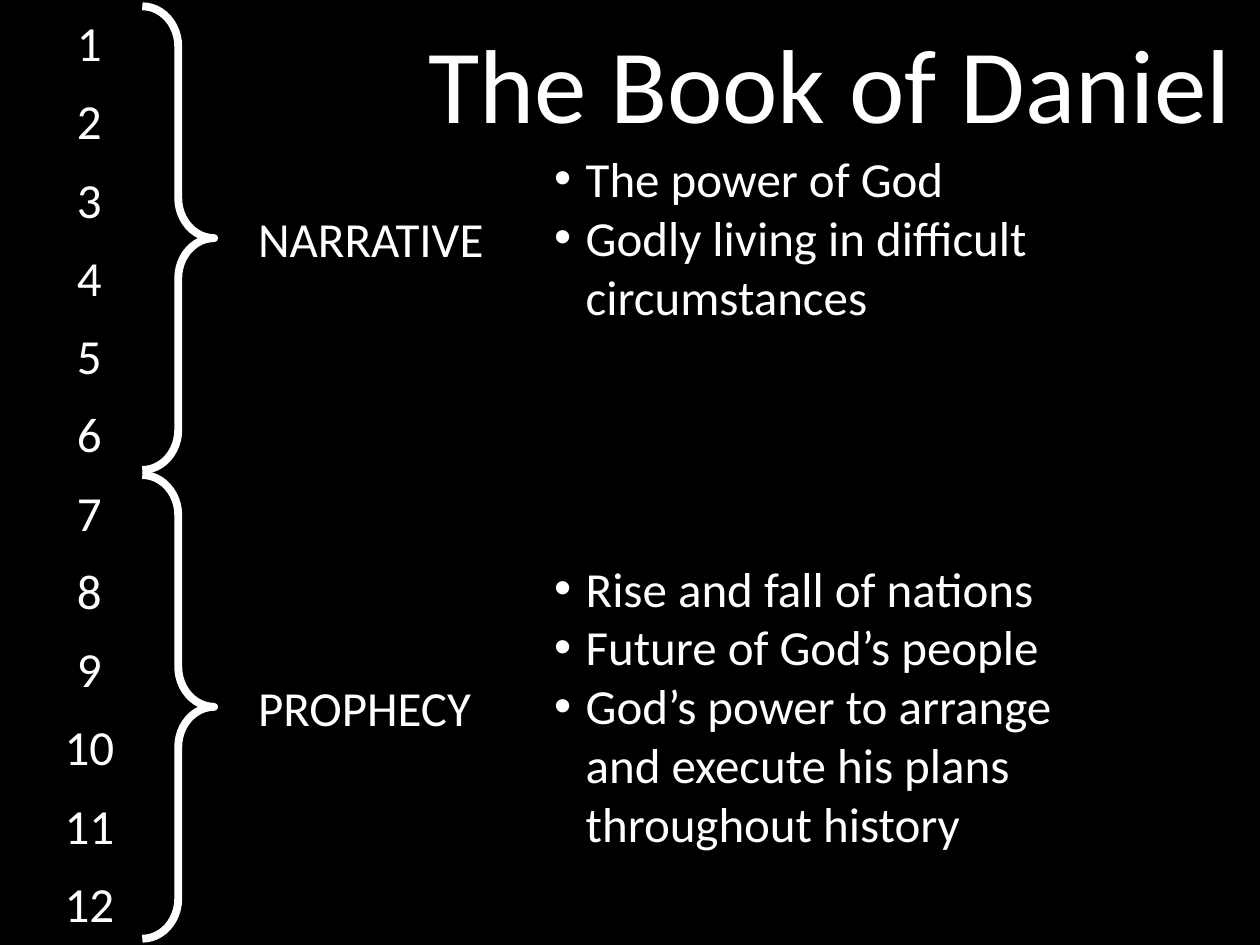
from dataclasses import dataclass

import lxml.etree
import pptx
import pptx.dml.color
import pptx.enum.shapes
import pptx.enum.text
import pptx.oxml.ns
import pptx.util

Inches = pptx.util.Inches
Pt = pptx.util.Pt
Align = pptx.enum.text.PP_ALIGN
Anchor = pptx.enum.text.MSO_ANCHOR
Shape = pptx.enum.shapes.MSO_SHAPE


@dataclass(frozen=True)
class Theme:
    font: str = "Calibri"
    background: str = "000000"
    foreground: str = "FFFFFF"
    title_size: int = 60
    body_size: int = 28
    brace_width: float = 4.5


def add_bullet(paragraph, indent=0.25):
    properties = paragraph._p.get_or_add_pPr()
    properties.set("marL", str(Inches(indent)))
    properties.set("indent", str(-Inches(indent)))
    for tag, name, value in (("a:buFont", "typeface", "Arial"), ("a:buChar", "char", "•")):
        element = lxml.etree.SubElement(properties, pptx.oxml.ns.qn(tag))
        element.set(name, value)


def write_text(frame, lines, *, theme, size, align=Align.LEFT, anchor=Anchor.MIDDLE,
               bullets=False, margin=None):
    frame.word_wrap = True
    frame.auto_size = pptx.enum.text.MSO_AUTO_SIZE.NONE
    frame.vertical_anchor = anchor
    if margin is not None:
        frame.margin_left = frame.margin_right = Inches(margin)
        frame.margin_top = frame.margin_bottom = Inches(margin)
    for index, line in enumerate(lines):
        paragraph = frame.paragraphs[0] if index == 0 else frame.add_paragraph()
        paragraph.alignment = align
        if bullets:
            add_bullet(paragraph)
        run = paragraph.add_run()
        run.text = line
        run.font.name = theme.font
        run.font.size = Pt(size)
        run.font.color.rgb = pptx.dml.color.RGBColor.from_string(theme.foreground)


class SlideBuilder:
    """Draws themed elements on one slide; a box is left, top, width, height in inches."""

    def __init__(self, slide, theme):
        self.slide = slide
        self.theme = theme
        fill = slide.background.fill
        fill.solid()
        fill.fore_color.rgb = pptx.dml.color.RGBColor.from_string(theme.background)

    def title(self, text, box):
        shape = self.slide.shapes.title
        shape.left, shape.top, shape.width, shape.height = map(Inches, box)
        write_text(shape.text_frame, [text], theme=self.theme,
                   size=self.theme.title_size, align=Align.CENTER)

    def text(self, lines, box, **text_format):
        shape = self.slide.shapes.add_textbox(*map(Inches, box))
        write_text(shape.text_frame, lines, theme=self.theme,
                   size=self.theme.body_size, **text_format)

    def preset(self, kind, box):
        shape = self.slide.shapes.add_shape(kind, *map(Inches, box))
        shape.shadow.inherit = False
        shape.fill.background()
        shape.line.fill.background()
        return shape

    def chapter(self, number, box):
        shape = self.preset(Shape.ROUNDED_RECTANGLE, box)
        write_text(shape.text_frame, [str(number)], theme=self.theme,
                   size=self.theme.body_size, align=Align.CENTER, margin=0)

    def brace(self, box):
        shape = self.preset(Shape.RIGHT_BRACE, box)
        shape.adjustments[0] = 0.56
        shape.adjustments[1] = 0.5
        shape.line.fill.solid()
        shape.line.color.rgb = pptx.dml.color.RGBColor.from_string(self.theme.foreground)
        shape.line.width = Pt(self.theme.brace_width)


CHAPTER_COUNT = 12
TOP, BOTTOM = 0.05, 7.45
ROW_HEIGHT = 0.57
ROW_STEP = (BOTTOM - TOP - ROW_HEIGHT) / (CHAPTER_COUNT - 1)
BRACE_HEIGHT = 3.68

# Name, top of the brace, top and height of the list, themes
SECTIONS = [
    ("NARRATIVE", TOP, 1.13, 1.51,
     ["The power of God", "Godly living in difficult circumstances"]),
    ("PROPHECY", BOTTOM - BRACE_HEIGHT, 4.38, 2.46,
     ["Rise and fall of nations", "Future of God’s people",
      "God’s power to arrange and execute his plans throughout history"]),
]


def main():
    presentation = pptx.Presentation()
    presentation.slide_width = Inches(10)
    presentation.slide_height = Inches(7.5)
    title_only = presentation.slide_layouts[5]
    builder = SlideBuilder(presentation.slides.add_slide(title_only), Theme())

    builder.title("The Book of Daniel", (3.26, 0.09, 6.65, 1.11))
    for row in range(CHAPTER_COUNT):
        builder.chapter(row + 1, (0.41, TOP + row * ROW_STEP, 0.6, ROW_HEIGHT))
    for name, brace_top, list_top, list_height, themes in SECTIONS:
        builder.brace((1.13, brace_top, 0.57, BRACE_HEIGHT))
        label_top = brace_top + (BRACE_HEIGHT - ROW_HEIGHT) / 2
        builder.text([name], (1.95, label_top, 2.11, ROW_HEIGHT))
        builder.text(themes, (4.3, list_top, 4.22, list_height),
                     anchor=Anchor.TOP, bullets=True)

    presentation.save("out.pptx")


if __name__ == "__main__":
    main()
